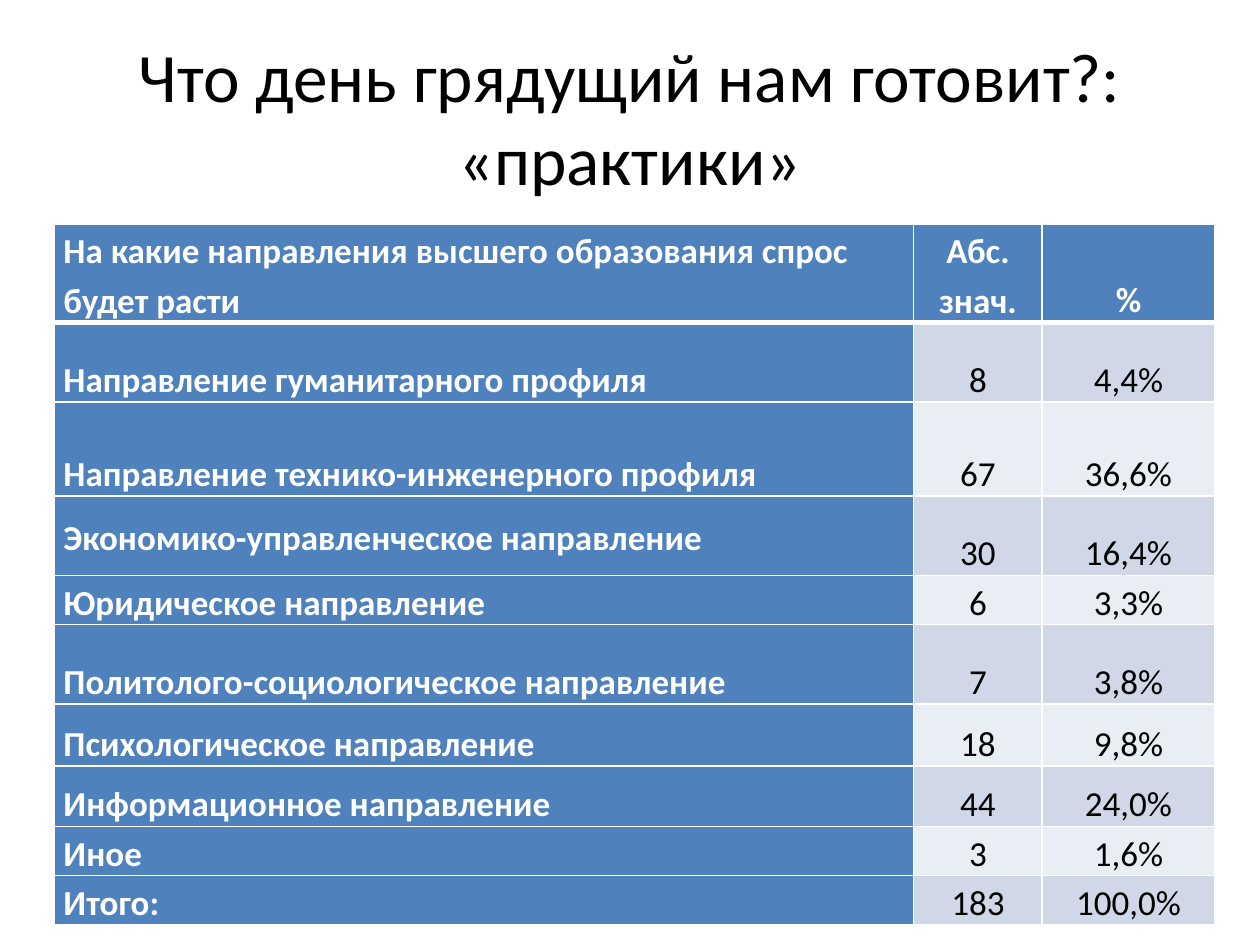
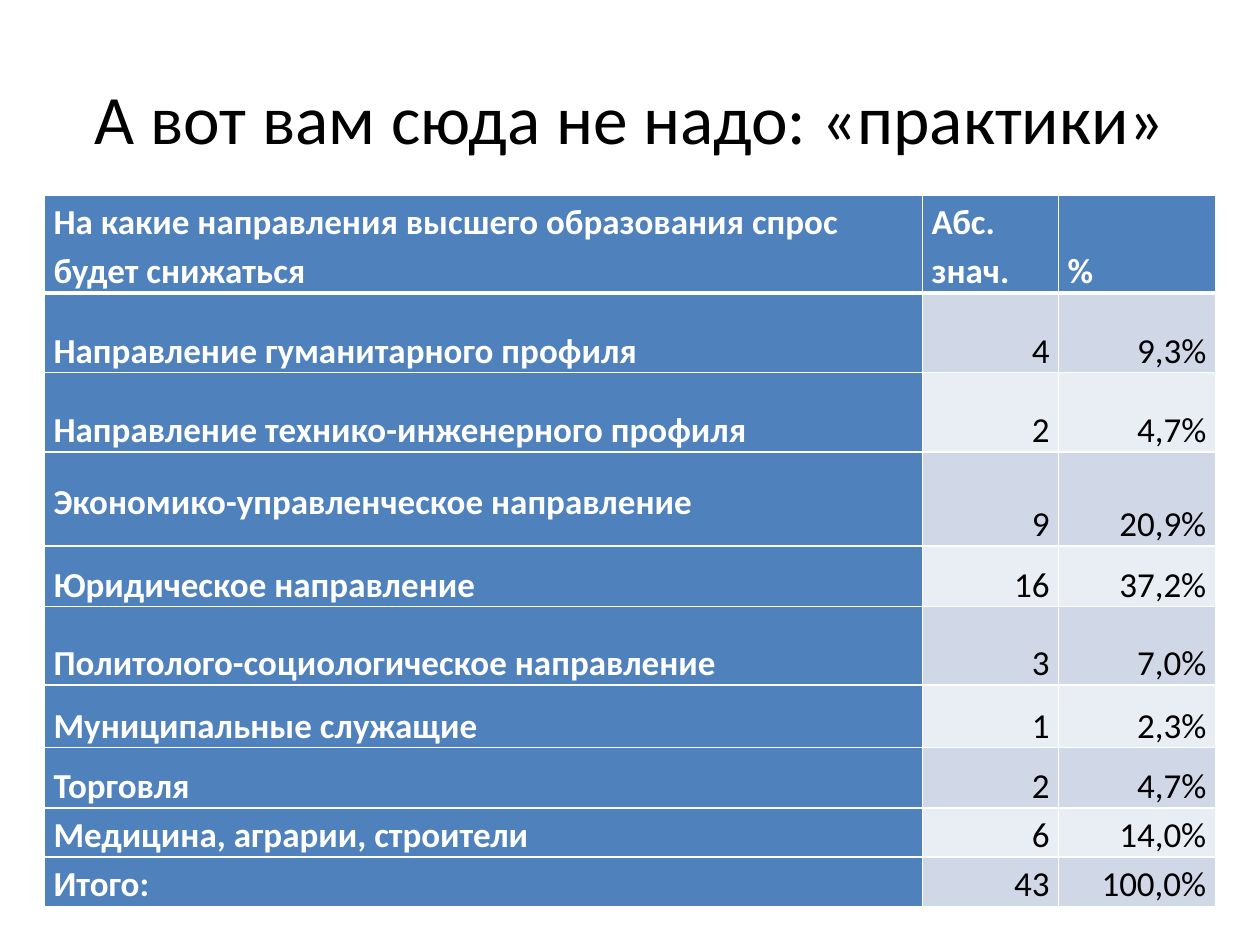
from dataclasses import dataclass

from lxml.etree import SubElement
from pptx import Presentation
from pptx.dml.color import RGBColor
from pptx.enum.text import MSO_ANCHOR, PP_ALIGN
from pptx.oxml.ns import qn
from pptx.slide import Slide
from pptx.table import _Cell
from pptx.util import Cm, Pt


@dataclass(frozen=True)
class Theme:
    font: str = "Calibri"
    title_size: float = 39.6
    table_size: float = 20
    line_spacing: float = 1.15
    thin_rule: float = 1
    header_rule: float = 3
    rule: str = "FFFFFF"
    dark: str = "000000"
    light: str = "FFFFFF"
    accent: str = "4F81BD"
    bands: tuple[str, str] = ("D0D8E8", "E9EDF4")


@dataclass(frozen=True)
class Row:
    label: str
    count: str
    share: str
    height: float
    label_anchor: MSO_ANCHOR = MSO_ANCHOR.BOTTOM


@dataclass(frozen=True)
class SurveyPage:
    title: str
    left: float
    top: float
    widths: tuple[float, float, float]
    header_align: PP_ALIGN
    value_align: PP_ALIGN
    rows: tuple[Row, ...]


THEME = Theme()
HUMANITIES = "Направление гуманитарного профиля"
ENGINEERING = "Направление технико-инженерного профиля"
ECONOMICS = "Экономико-управленческое направление"
LAW = "Юридическое направление"
POLITICS = "Политолого-социологическое направление"


def header_row(trend: str) -> Row:
    return Row(f"На какие направления высшего образования спрос будет {trend}", "Абс. знач.", "%", 1.98)


PAGES = (
    SurveyPage(
        "Что день грядущий нам готовит?: «практики»",
        1.1, 4.52, (17.32, 2.59, 3.48), PP_ALIGN.CENTER, PP_ALIGN.CENTER,
        (
            header_row("расти"),
            Row(HUMANITIES, "8", "4,4%", 1.6),
            Row(ENGINEERING, "67", "36,6%", 1.9),
            Row(ECONOMICS, "30", "16,4%", 1.6, MSO_ANCHOR.MIDDLE),
            Row(LAW, "6", "3,3%", 0.99),
            Row(POLITICS, "7", "3,8%", 1.6),
            Row("Психологическое направление", "18", "9,8%", 1.25),
            Row("Информационное направление", "44", "24,0%", 1.22),
            Row("Иное", "3", "1,6%", 0.99),
            Row("Итого:", "183", "100,0%", 0.99),
        ),
    ),
    SurveyPage(
        "А вот вам сюда не надо: «практики»",
        0.9, 3.93, (17.7, 2.74, 3.16), PP_ALIGN.LEFT, PP_ALIGN.RIGHT,
        (
            header_row("снижаться"),
            Row(HUMANITIES, "4", "9,3%", 1.6),
            Row(ENGINEERING, "2", "4,7%", 1.6),
            Row(ECONOMICS, "9", "20,9%", 1.9, MSO_ANCHOR.MIDDLE),
            Row(LAW, "16", "37,2%", 1.22),
            Row(POLITICS, "3", "7,0%", 1.58),
            Row("Муниципальные служащие", "1", "2,3%", 1.26),
            Row("Торговля", "2", "4,7%", 1.22),
            Row("Медицина, аграрии, строители", "6", "14,0%", 0.99),
            Row("Итого:", "43", "100,0%", 0.99),
        ),
    ),
)


def write(para, text: str, size: float, color: str, align: PP_ALIGN, bold: bool = False) -> None:
    para.alignment = align
    span = para.add_run()
    span.text = text
    span.font.name = THEME.font
    span.font.size = Pt(size)
    span.font.bold = bold
    span.font.color.rgb = RGBColor.from_string(color)


def draw_borders(cell: _Cell, top: float, bottom: float) -> None:
    properties = cell._tc.get_or_add_tcPr()
    thin = THEME.thin_rule
    for side, width in (("L", thin), ("R", thin), ("T", top), ("B", bottom)):
        line = SubElement(properties, qn(f"a:ln{side}"), w=str(Pt(width)))
        fill = SubElement(line, qn("a:solidFill"))
        SubElement(fill, qn("a:srgbClr"), val=THEME.rule)


def draw_title(page: Slide, text: str) -> None:
    box = page.shapes.add_textbox(Cm(1.27), Cm(0.76), Cm(22.86), Cm(3.18))
    frame = box.text_frame
    frame.word_wrap = True
    frame.vertical_anchor = MSO_ANCHOR.MIDDLE
    write(frame.paragraphs[0], text, THEME.title_size, THEME.dark, PP_ALIGN.CENTER)


def fill_cell(cell: _Cell, text: str, row: int, column: int, survey: SurveyPage) -> None:
    is_header, is_label = row == 0, column == 0
    strong = is_header or is_label
    if is_label:
        align = PP_ALIGN.LEFT
    else:
        align = survey.header_align if is_header else survey.value_align
    cell.margin_left = cell.margin_right = Cm(0.18)
    cell.margin_top = cell.margin_bottom = Cm(0)
    cell.vertical_anchor = survey.rows[row].label_anchor if is_label else MSO_ANCHOR.BOTTOM
    draw_borders(
        cell,
        THEME.header_rule if row == 1 else THEME.thin_rule,
        THEME.header_rule if is_header else THEME.thin_rule,
    )
    cell.fill.solid()
    color = THEME.accent if strong else THEME.bands[(row - 1) % 2]
    cell.fill.fore_color.rgb = RGBColor.from_string(color)
    para = cell.text_frame.paragraphs[0]
    para.line_spacing = THEME.line_spacing
    write(para, text, THEME.table_size, THEME.light if strong else THEME.dark, align, strong)


def draw_table(page: Slide, survey: SurveyPage) -> None:
    width = Cm(sum(survey.widths))
    height = Cm(sum(row.height for row in survey.rows))
    table = page.shapes.add_table(
        len(survey.rows), len(survey.widths), Cm(survey.left), Cm(survey.top), width, height
    ).table
    for column, column_width in zip(table.columns, survey.widths):
        column.width = Cm(column_width)
    for index, row in enumerate(survey.rows):
        table.rows[index].height = Cm(row.height)
        for column, text in enumerate((row.label, row.count, row.share)):
            fill_cell(table.cell(index, column), text, index, column, survey)


def main() -> None:
    deck = Presentation()
    deck.slide_width, deck.slide_height = Cm(25.4), Cm(19.05)
    for survey in PAGES:
        page = deck.slides.add_slide(deck.slide_layouts[6])
        draw_title(page, survey.title)
        draw_table(page, survey)
    deck.save("out.pptx")


if __name__ == "__main__":
    main()
